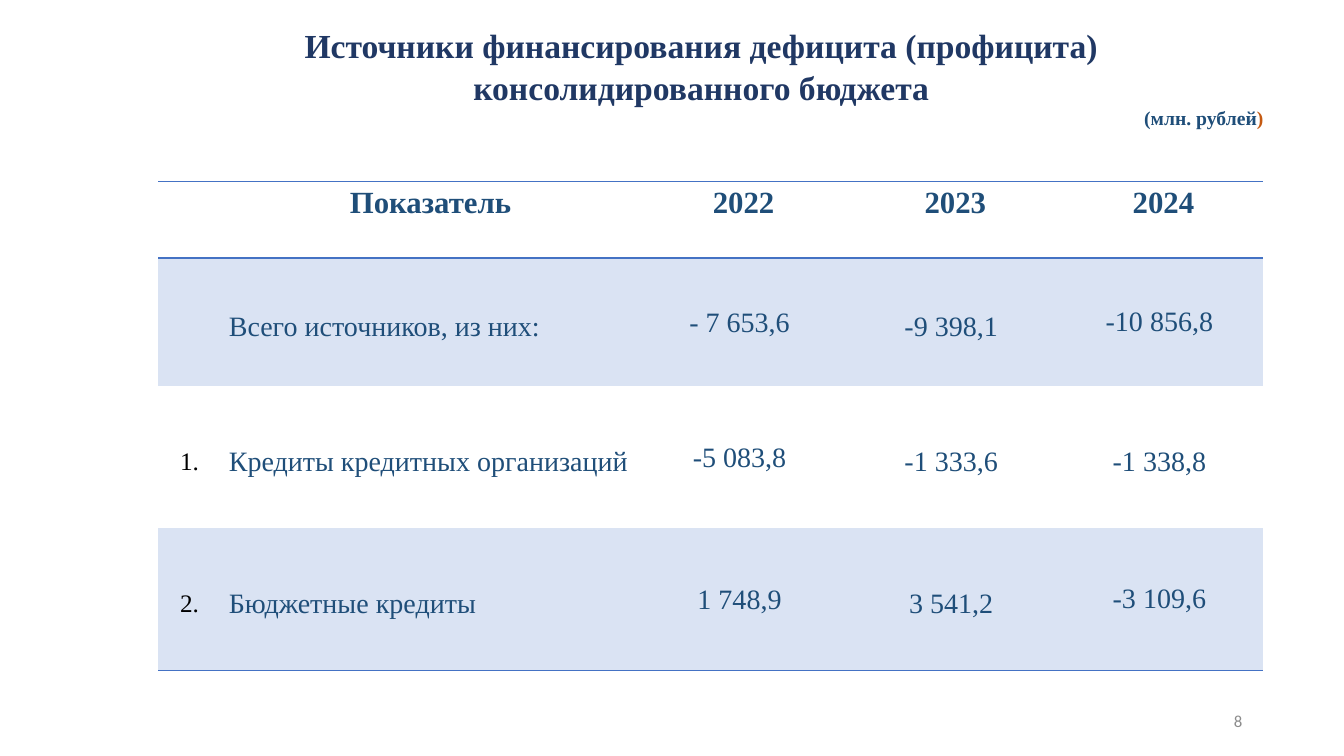
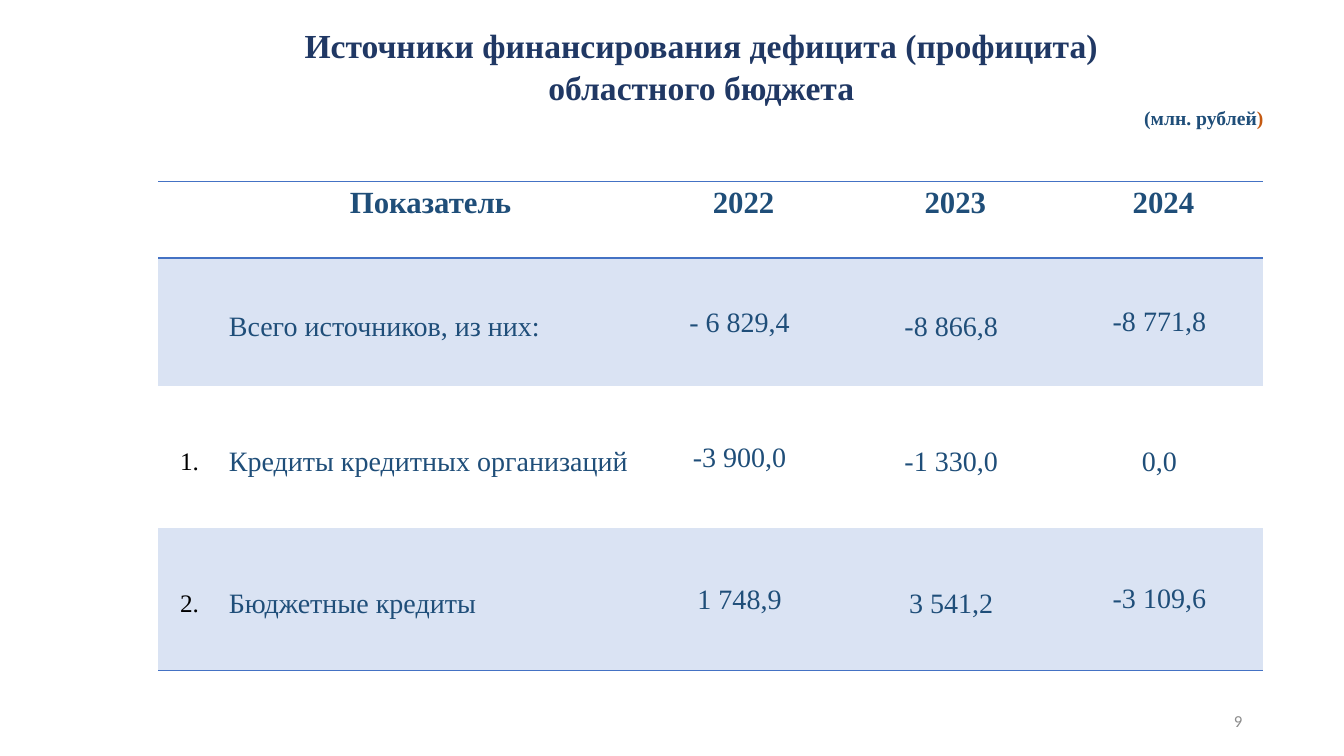
import pptx
import pptx.util
import pptx.dml.color
import pptx.enum.text
import pptx.oxml
import pptx.oxml.ns

Inches = pptx.util.Inches
Pt = pptx.util.Pt
RGBColor = pptx.dml.color.RGBColor
ALIGN = pptx.enum.text.PP_ALIGN
ANCHOR = pptx.enum.text.MSO_ANCHOR

NAVY = RGBColor(0x20, 0x38, 0x64)
BLUE = RGBColor(0x1F, 0x4E, 0x79)
RUST = RGBColor(0xC5, 0x5A, 0x11)
GREY = RGBColor(0x8C, 0x8C, 0x8C)
BLACK = RGBColor(0, 0, 0)
BAND = RGBColor(0xDA, 0xE3, 0xF3)
RULE = RGBColor(0x44, 0x72, 0xC4)

SERIF = "Times New Roman"
SANS = "Calibri"
PLAIN = "{2D5ABB26-0587-4C30-8999-92F81FD0307C}"

TITLE = {"name": SERIF, "size": Pt(24), "bold": True, "color": NAVY}
UNIT = {"name": SERIF, "size": Pt(14), "bold": True, "color": BLUE}
PAGE = {"name": SANS, "size": Pt(12), "color": GREY}
HEAD = {"name": SERIF, "size": Pt(22), "bold": True, "color": BLUE}
BODY = {"name": SERIF, "size": Pt(20), "bold": False, "color": BLUE}
ORDER = {**BODY, "size": Pt(18), "color": BLACK}

WIDTHS = [0.62, 4.08, 2.13, 2.07, 2.06]
HEIGHTS = [0.76, 1.27, 1.41, 1.41]
LABELS = ["", "Показатель", "2022", "2023", "2024"]
NAMES = [
    ["", "Всего источников, из них:"],
    ["1.", "Кредиты кредитных организаций"],
    ["2.", "Бюджетные кредиты"],
]

# Cell margins: left, top, right, bottom
EVEN = (0.1, 0.05, 0.1, 0.05)
LOW = (0, 0.09, 0, 0)
INDENT = (0.18, 0.05, 0.1, 0.05)
NAME = (0.08, 0.09, 0, 0)
TIGHT = (0.01, 0.01, 0.01, 0)
PADS = [LOW, NAME, TIGHT, LOW, EVEN]

SLIDES = [
    ("8", "консолидированного бюджета", [
        ["- 7 653,6", "-9 398,1", "-10 856,8"],
        ["-5 083,8", "-1 333,6", "-1 338,8"],
        ["1 748,9", "3 541,2", "-3 109,6"],
    ]),
    ("9", "областного бюджета", [
        ["- 6 829,4", "-8 866,8", "-8 771,8"],
        ["-3 900,0", "-1 330,0", "0,0"],
        ["1 748,9", "3 541,2", "-3 109,6"],
    ]),
]


def style(font, look):
    for key, value in look.items():
        if key == "color":
            font.color.rgb = value
        else:
            setattr(font, key, value)


def pad(owner, sides):
    for side, size in zip(("left", "top", "right", "bottom"), sides):
        setattr(owner, "margin_" + side, Inches(size))


def write(para, text, look, align):
    para.alignment = align
    run = para.add_run()
    run.text = text
    style(run.font, look)


def add_box(slide, place, sides=EVEN, anchor=ANCHOR.TOP):
    frame = slide.shapes.add_textbox(*map(Inches, place)).text_frame
    frame.word_wrap = True
    frame.vertical_anchor = anchor
    pad(frame, sides)
    return frame


def add_title(slide, budget):
    frame = add_box(slide, (0, 0, 13.33, 1.05), (0.58, 0.24, 0, 0))
    first, last = frame.paragraphs[0], frame.add_paragraph()
    write(first, "Источники финансирования дефицита (профицита)", TITLE,
          ALIGN.CENTER)
    write(last, budget, TITLE, ALIGN.CENTER)
    first.line_spacing = last.line_spacing = 1.02
    last.space_before = Pt(0.5)


def add_unit(slide):
    para = add_box(slide, (11.1, 1, 1.68, 0.34)).paragraphs[0]
    write(para, "(млн. рублей", UNIT, ALIGN.CENTER)
    write(para, ")", {**UNIT, "color": RUST}, ALIGN.CENTER)


def add_page(slide, number):
    frame = add_box(slide, (9.42, 6.95, 3, 0.4), anchor=ANCHOR.MIDDLE)
    write(frame.paragraphs[0], number, PAGE, ALIGN.RIGHT)


def add_rule(cell, edge):
    """Draw a 1 pt line on a cell edge: lnT or lnB; call before the fill."""
    cell._tc.get_or_add_tcPr().append(pptx.oxml.parse_xml(
        f'<a:{edge} {pptx.oxml.ns.nsdecls("a")} w="12700"><a:solidFill>'
        f'<a:srgbClr val="{RULE}"/></a:solidFill></a:{edge}>'))


def fill_cell(cell, text, row, col):
    head = row == 0
    cell.vertical_anchor = ANCHOR.TOP if head else ANCHOR.MIDDLE
    sides = INDENT if head else PADS[col]
    if (row, col) == (2, 4):
        sides = LOW
    pad(cell, sides)
    if head:
        add_rule(cell, "lnT")
    if row in (0, len(NAMES)):
        add_rule(cell, "lnB")
    if row % 2:
        cell.fill.solid()
        cell.fill.fore_color.rgb = BAND
    else:
        cell.fill.background()
    if text:
        look = HEAD if head else BODY if col else ORDER
        align = ALIGN.LEFT if col == 1 and not head else ALIGN.CENTER
        write(cell.text_frame.paragraphs[0], text, look, align)


def add_grid(slide, values):
    rows = [LABELS] + [name + nums for name, nums in zip(NAMES, values)]
    place = (1.57, 1.8, sum(WIDTHS), sum(HEIGHTS))
    table = slide.shapes.add_table(
        len(rows), len(WIDTHS), *map(Inches, place)).table
    table._tbl.tblPr.find(pptx.oxml.ns.qn("a:tableStyleId")).text = PLAIN
    for col, width in zip(table.columns, WIDTHS):
        col.width = Inches(width)
    for row, height in zip(table.rows, HEIGHTS):
        row.height = Inches(height)
    for r, row in enumerate(rows):
        for c, text in enumerate(row):
            fill_cell(table.cell(r, c), text, r, c)


def main():
    deck = pptx.Presentation()
    deck.slide_width = Inches(13.33)
    deck.slide_height = Inches(7.5)
    for number, budget, values in SLIDES:
        slide = deck.slides.add_slide(deck.slide_layouts[6])
        add_title(slide, budget)
        add_unit(slide)
        add_page(slide, number)
        add_grid(slide, values)
    deck.save("out.pptx")


if __name__ == "__main__":
    main()
